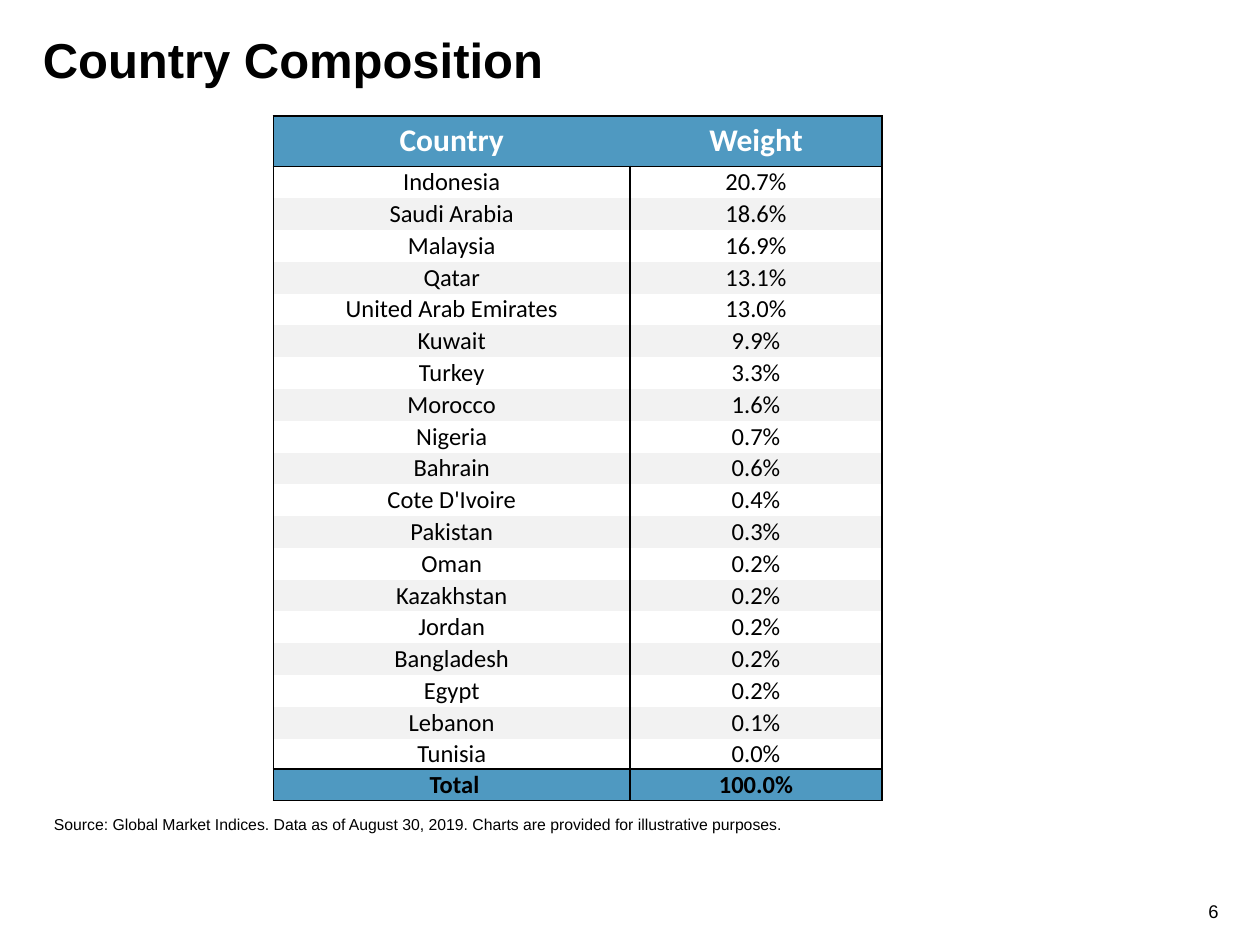
from dataclasses import dataclass

from lxml import etree
from pptx import Presentation
from pptx import util as u
from pptx.dml.color import RGBColor
from pptx.enum import text
from pptx.oxml.ns import qn


@dataclass(frozen=True)
class Theme:
    black: str = "000000"
    white: str = "FFFFFF"
    blue: str = "4F99C1"
    band: str = "F2F2F2"
    font: str = "Arial"
    table_font: str = "Calibri"
    title: float = 28
    header: float = 18
    body: float = 14
    number: float = 10.5
    note: float = 9
    border: float = 1
    no_grid: str = "{2D5ABB26-0587-4C30-8999-92F81FD0307C}"


@dataclass(frozen=True)
class RowStyle:
    size: float
    color: str
    bold: bool = False
    fill: str | None = None
    sides: tuple[str, str] = ("LR", "LR")  # borders of the two cells


@dataclass(frozen=True)
class Country:
    name: str
    weight: str


T = Theme()

COUNTRIES = [
    Country("Indonesia", "20.7%"),
    Country("Saudi Arabia", "18.6%"),
    Country("Malaysia", "16.9%"),
    Country("Qatar", "13.1%"),
    Country("United Arab Emirates", "13.0%"),
    Country("Kuwait", "9.9%"),
    Country("Turkey", "3.3%"),
    Country("Morocco", "1.6%"),
    Country("Nigeria", "0.7%"),
    Country("Bahrain", "0.6%"),
    Country("Cote D'Ivoire", "0.4%"),
    Country("Pakistan", "0.3%"),
    Country("Oman", "0.2%"),
    Country("Kazakhstan", "0.2%"),
    Country("Jordan", "0.2%"),
    Country("Bangladesh", "0.2%"),
    Country("Egypt", "0.2%"),
    Country("Lebanon", "0.1%"),
    Country("Tunisia", "0.0%"),
]

HEADER = RowStyle(T.header, T.white, True, T.blue, ("LTB", "TRB"))
TOTAL = RowStyle(T.body, T.black, True, T.blue, ("LRTB", "LRTB"))
PLAIN = RowStyle(T.body, T.black)
BANDED = RowStyle(T.body, T.black, fill=T.band)


def set_text(tf, words: str, size: float, align, font: str = T.font,
             color: str = T.black, bold: bool = False) -> None:
    tf.text = words
    p = tf.paragraphs[0]
    p.alignment = align
    f = p.runs[0].font
    f.name, f.size, f.bold = font, u.Pt(size), bold
    f.color.rgb = RGBColor.from_string(color)


def set_margins(box, left: float, top: float, right: float, bottom: float) -> None:
    box.margin_left, box.margin_top = u.Inches(left), u.Inches(top)
    box.margin_right, box.margin_bottom = u.Inches(right), u.Inches(bottom)


def add_borders(cell, sides: str) -> None:
    tc_pr = cell._tc.get_or_add_tcPr()
    for side in "LRTB":  # order the schema asks for
        if side in sides:
            ln = etree.SubElement(tc_pr, qn(f"a:ln{side}"), w=str(u.Pt(T.border)))
            fill = etree.SubElement(ln, qn("a:solidFill"))
            etree.SubElement(fill, qn("a:srgbClr"), val=T.black)


def fill_row(row, values: tuple[str, str], style: RowStyle, height: int) -> None:
    row.height = height
    for cell, value, sides in zip(row.cells, values, style.sides):
        set_margins(cell, 0, 0, 0, 0)
        cell.vertical_anchor = text.MSO_ANCHOR.MIDDLE
        set_text(cell.text_frame, value, style.size, text.PP_ALIGN.CENTER,
                 T.table_font, style.color, style.bold)
        add_borders(cell, sides)
        if style.fill:
            cell.fill.solid()
            cell.fill.fore_color.rgb = RGBColor.from_string(style.fill)
        else:
            cell.fill.background()


def add_weights(s) -> None:
    rows = [("Country", "Weight", HEADER)]
    rows += [(c.name, c.weight, BANDED if i % 2 else PLAIN)
             for i, c in enumerate(COUNTRIES)]
    rows.append((" Total", "100.0%", TOTAL))

    # The header and the last country have their own heights, the rest are equal
    height, header, last = u.Inches(5.44), u.Inches(0.4), u.Inches(0.24)
    heights = [(height - header - last) // (len(rows) - 2)] * len(rows)
    heights[0], heights[-2] = header, last

    table = s.shapes.add_table(len(rows), 2, u.Inches(2.17), u.Inches(0.92),
                               u.Inches(4.83), height).table
    table.first_row = table.horz_banding = False
    table._tbl.tblPr.find(qn("a:tableStyleId")).text = T.no_grid
    for column, width in zip(table.columns, (2.83, 2)):
        column.width = u.Inches(width)
    for row, (name, weight, style), row_height in zip(table.rows, rows, heights):
        fill_row(row, (name, weight), style, row_height)


def add_label(s, words: str, size: float, align, left: float, top: float,
              width: float, height: float):
    sp = s.shapes.add_textbox(u.Inches(left), u.Inches(top),
                              u.Inches(width), u.Inches(height))
    tf = sp.text_frame
    tf.word_wrap = True
    set_text(tf, words, size, align)
    return tf


def main() -> None:
    prs = Presentation()
    prs.slide_width, prs.slide_height = u.Inches(10), u.Inches(7.5)
    s = prs.slides.add_slide(prs.slide_layouts[5])

    # Title
    title = s.shapes.title
    title.left, title.top = u.Inches(0.34), u.Inches(0.24)
    title.width, title.height = u.Inches(9.32), u.Inches(0.95)
    tf = title.text_frame
    set_margins(tf, 0, 0.05, 0.1, 0.05)
    tf.vertical_anchor = text.MSO_ANCHOR.TOP
    tf.auto_size = text.MSO_AUTO_SIZE.NONE
    set_text(tf, "Country Composition", T.title, text.PP_ALIGN.LEFT, bold=True)
    tf.paragraphs[0].line_spacing = 0.9

    # Country weights
    add_weights(s)

    # Source line
    add_label(s, "Source: Global Market Indices. Data as of August 30, 2019. "
              "Charts are provided for illustrative purposes.",
              T.note, text.PP_ALIGN.JUSTIFY, 0.33, 6.42, 9.33, 0.24)

    # Page number
    tf = add_label(s, "6", T.number, text.PP_ALIGN.RIGHT, 9.2, 6.91, 0.47, 0.41)
    set_margins(tf, 0.1, 0, 0, 0)
    tf.vertical_anchor = text.MSO_ANCHOR.BOTTOM

    prs.save("out.pptx")


if __name__ == "__main__":
    main()
